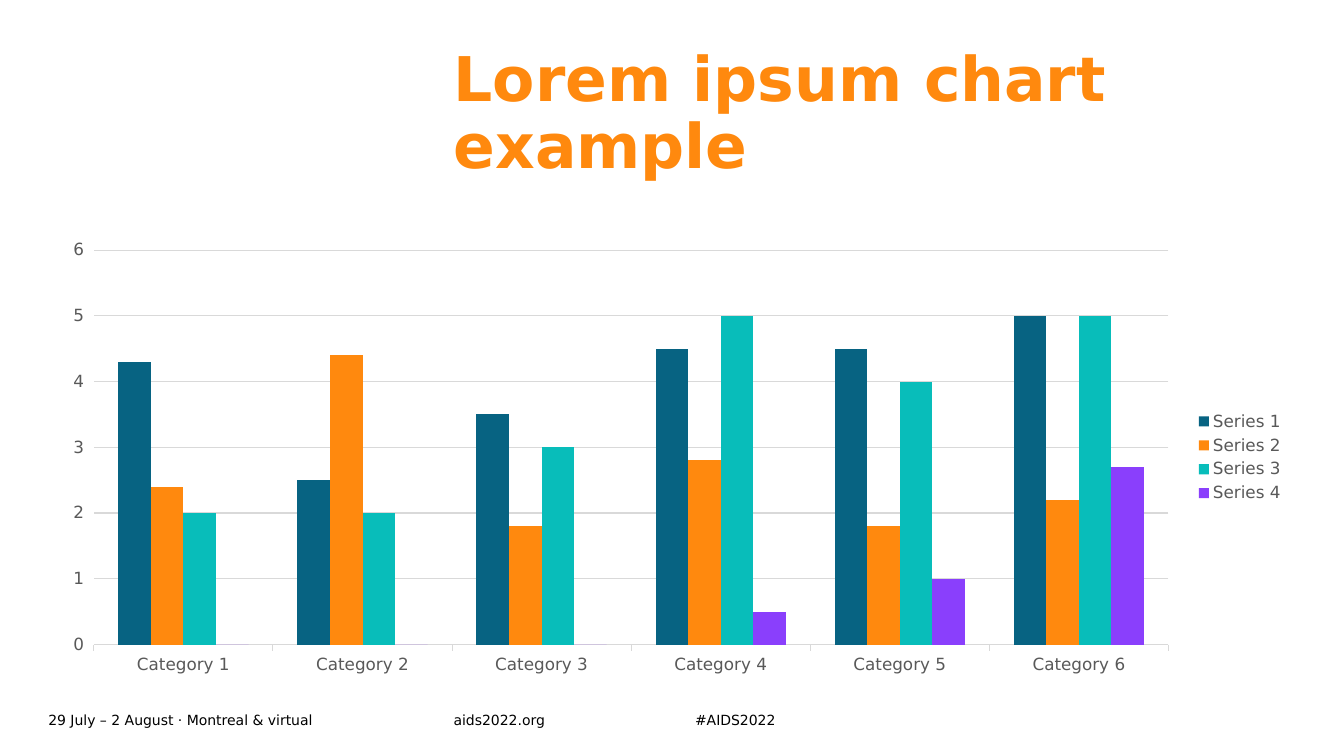
from pptx import Presentation
from pptx.chart.data import CategoryChartData
from pptx.dml.color import RGBColor
from pptx.enum.chart import XL_CHART_TYPE as ChartType
from pptx.enum.chart import XL_LEGEND_POSITION as LegendPosition
from pptx.enum.chart import XL_TICK_MARK as TickMark
from pptx.enum.text import MSO_ANCHOR as Anchor
from pptx.util import Pt

EMU_PER_PX = 9525
FONT = "DejaVu Sans"
COLORS = {
    "black": "000000",
    "gray": "595959",
    "grid": "D9D9D9",
    "blue": "076382",
    "orange": "FF890E",
    "teal": "08BDBA",
    "purple": "8A3FFC",
}
SERIES = [
    ("Series 1", "blue", (4.3, 2.5, 3.5, 4.5, 4.5, 5)),
    ("Series 2", "orange", (2.4, 4.4, 1.8, 2.8, 1.8, 2.2)),
    ("Series 3", "teal", (2, 2, 3, 5, 4, 5)),
    ("Series 4", "purple", (0, 0, 0, 0.5, 1, 2.7)),
]
FOOTERS = [
    ("29 July – 2 August · Montreal & virtual", 46, 386),
    ("aids2022.org", 432, 185),
    ("#AIDS2022", 662, 185),
]


def px(value):
    return value * EMU_PER_PX


def rgb(name):
    return RGBColor.from_string(COLORS[name])


def set_font(font, size, color, bold=False):
    font.name = FONT
    font.size = Pt(size)
    font.bold = bold
    font.color.rgb = rgb(color)


def add_text(slide, text, left, top, width, height, size=10, color="black",
             bold=False, anchor=Anchor.MIDDLE, line_spacing=None):
    box = slide.shapes.add_textbox(px(left), px(top), px(width), px(height))
    frame = box.text_frame
    frame.word_wrap = True
    frame.vertical_anchor = anchor
    frame.margin_left = frame.margin_right = 0
    frame.margin_top = frame.margin_bottom = 0
    paragraph = frame.paragraphs[0]
    paragraph.line_spacing = line_spacing
    run = paragraph.add_run()
    run.text = text
    set_font(run.font, size, color, bold)


def set_line(line, color):
    line.color.rgb = rgb(color)
    line.width = Pt(0.75)


def style_axes(chart):
    for axis in (chart.category_axis, chart.value_axis):
        set_font(axis.tick_labels.font, 12, "gray")
        axis.major_tick_mark = TickMark.OUTSIDE
        axis.minor_tick_mark = TickMark.NONE
    set_line(chart.category_axis.format.line, "grid")
    value_axis = chart.value_axis
    value_axis.format.line.fill.background()
    value_axis.minimum_scale = 0
    value_axis.maximum_scale = 6
    value_axis.major_unit = 1
    value_axis.has_major_gridlines = True
    set_line(value_axis.major_gridlines.format.line, "grid")


def add_column_chart(slide, left, top, width, height):
    data = CategoryChartData()
    data.categories = [f"Category {number}" for number in range(1, 7)]
    for name, _, values in SERIES:
        data.add_series(name, values)
    chart = slide.shapes.add_chart(
        ChartType.COLUMN_CLUSTERED, px(left), px(top), px(width), px(height), data
    ).chart
    set_font(chart.font, 10, "black")
    chart.has_title = False
    chart.has_legend = True
    chart.legend.position = LegendPosition.RIGHT
    chart.legend.include_in_layout = False
    set_font(chart.legend.font, 12, "gray")
    style_axes(chart)
    plot = chart.plots[0]
    plot.gap_width = 150
    plot.overlap = 0
    plot.vary_by_categories = False
    for series, (_, color, _) in zip(plot.series, SERIES):
        series.invert_if_negative = False
        series.format.fill.solid()
        series.format.fill.fore_color.rgb = rgb(color)


def main():
    presentation = Presentation()
    presentation.slide_width = px(1280)
    presentation.slide_height = px(720)
    slide = presentation.slides.add_slide(presentation.slide_layouts[6])
    for text, left, width in FOOTERS:
        add_text(slide, text, left, 674, width, 23)
    add_column_chart(slide, 46, 220, 1187, 431)
    add_text(slide, "Lorem ipsum chart example", 432, 46, 802, 129, size=44,
             color="orange", bold=True, anchor=Anchor.TOP, line_spacing=0.9)
    presentation.save("out.pptx")


if __name__ == "__main__":
    main()
